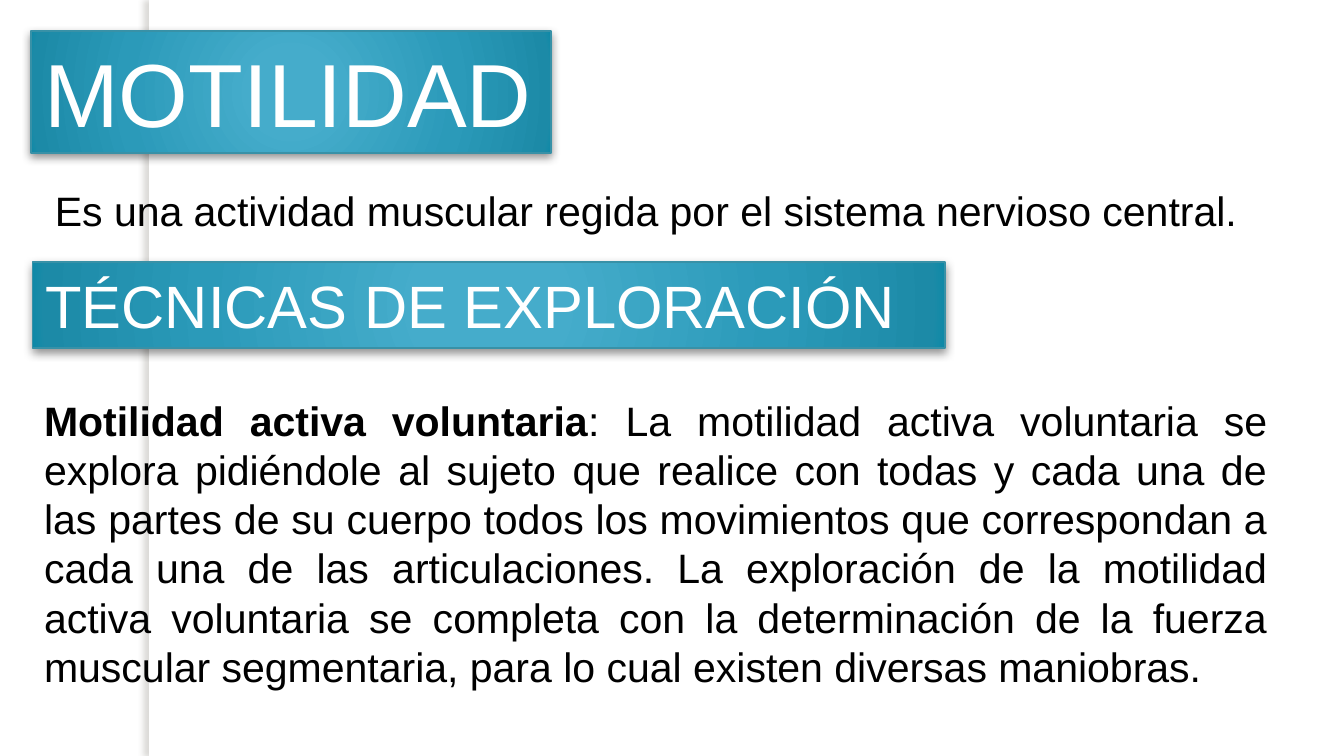
import lxml.etree
import pptx
import pptx.dml.color
import pptx.enum.dml
import pptx.enum.shapes
import pptx.enum.text
import pptx.oxml
import pptx.oxml.ns
import pptx.util

Inches = pptx.util.Inches
Align = pptx.enum.text.PP_ALIGN
Anchor = pptx.enum.text.MSO_ANCHOR
SLIDE_WIDTH = Inches(10)
SLIDE_HEIGHT = SLIDE_WIDTH * 9 // 16
FONT = "Arial"
WHITE, BLACK = "FFFFFF", "000000"
BANNER_STOPS = [(0, "45ACCC"), (15, "45ACCB"), (62, "2B9AB9"),
                (97, "1C8AA7"), (100, "0E89A7")]


def rgb(color):
    return pptx.dml.color.RGBColor.from_string(color)


def place(shape, left, top, width, height):
    shape.left, shape.top = Inches(left), Inches(top)
    shape.width, shape.height = Inches(width), Inches(height)


def add_rectangle(slide, *box):
    kind = pptx.enum.shapes.MSO_SHAPE.RECTANGLE
    return slide.shapes.add_shape(kind, *[Inches(value) for value in box])


def add_shadow(shape, color, opacity, blur, distance, angle):
    """Outer shadow: opacity in percent, lengths in points, angle in degrees."""
    shape.shadow.inherit = False
    effects = shape._element.spPr.find(pptx.oxml.ns.qn("a:effectLst"))
    effects.append(pptx.oxml.parse_xml(
        f'<a:outerShdw {pptx.oxml.ns.nsdecls("a")} blurRad="{pptx.util.Pt(blur)}" '
        f'dist="{pptx.util.Pt(distance)}" dir="{angle * 60000}" rotWithShape="0">'
        f'<a:srgbClr val="{color}"><a:alpha val="{opacity * 1000}"/></a:srgbClr>'
        '</a:outerShdw>'))


def fill_radial(shape, stops):
    shape.fill.gradient()
    gradient = shape._element.spPr.find(pptx.oxml.ns.qn("a:gradFill"))
    for child in list(gradient):
        gradient.remove(child)
    stop_list = lxml.etree.SubElement(gradient, pptx.oxml.ns.qn("a:gsLst"))
    for position, color in stops:
        stop = lxml.etree.SubElement(
            stop_list, pptx.oxml.ns.qn("a:gs"), pos=str(position * 1000))
        lxml.etree.SubElement(stop, pptx.oxml.ns.qn("a:srgbClr"), val=color)
    circle = lxml.etree.SubElement(gradient, pptx.oxml.ns.qn("a:path"), path="circle")
    lxml.etree.SubElement(circle, pptx.oxml.ns.qn("a:fillToRect"),
                          l="50000", t="50000", r="50000", b="50000")


def write_text(shape, runs, size, color, align=Align.LEFT, anchor=Anchor.TOP):
    """Write one paragraph from (text, bold) runs."""
    frame = shape.text_frame
    frame.word_wrap = True
    frame.auto_size = pptx.enum.text.MSO_AUTO_SIZE.NONE
    frame.vertical_anchor = anchor
    paragraph = frame.paragraphs[0]
    paragraph.alignment = align
    for text, bold in runs:
        run = paragraph.add_run()
        run.text = text
        run.font.name = FONT
        run.font.size = pptx.util.Pt(size)
        run.font.bold = bold
        run.font.color.rgb = rgb(color)


def style_banner(shape, text, size):
    fill_radial(shape, BANNER_STOPS)
    shape.line.color.rgb = rgb("3891A7")
    shape.line.width = pptx.util.Pt(0.75)
    add_shadow(shape, BLACK, 43, 5, 2, 90)
    write_text(shape, [(text, False)], size, WHITE)


def add_body(slide, box, runs, **options):
    shape = slide.shapes.add_textbox(*[Inches(value) for value in box])
    write_text(shape, runs, 22, BLACK, **options)


def add_side_strip(slide):
    strip = add_rectangle(slide, 1.11, 0, 0.08, 5.62)
    strip.height = SLIDE_HEIGHT
    strip.fill.solid()
    strip.fill.fore_color.rgb = rgb(WHITE)
    strip.line.fill.background()
    add_shadow(strip, "736F63", 25, 3, 3, 180)
    # Send the strip behind the title
    slide.shapes.title._element.addprevious(strip._element)


def main():
    presentation = pptx.Presentation()
    presentation.slide_width = SLIDE_WIDTH
    presentation.slide_height = SLIDE_HEIGHT
    slide = presentation.slides.add_slide(presentation.slide_layouts[5])
    slide.background.fill.solid()
    slide.background.fill.fore_color.rgb = rgb(WHITE)
    add_side_strip(slide)

    # Title and definition
    title = slide.shapes.title
    place(title, 0.23, 0.23, 3.87, 0.91)
    style_banner(title, "MOTILIDAD", 48)
    add_body(slide, (0.31, 1.33, 9.06, 0.47),
             [("Es una actividad muscular regida por el sistema nervioso central.", False)],
             anchor=Anchor.MIDDLE)

    # Examination techniques
    techniques = add_rectangle(slide, 0.24, 1.95, 6.79, 0.64)
    style_banner(techniques, "TÉCNICAS DE EXPLORACIÓN", 32)
    add_body(slide, (0.23, 2.89, 9.3, 2.32), [
        ("Motilidad activa voluntaria", True),
        (": La motilidad activa voluntaria se explora pidiéndole al sujeto que "
         "realice con todas y cada una de las partes de su cuerpo todos los "
         "movimientos que correspondan a cada una de las articulaciones. La "
         "exploración de la motilidad activa voluntaria se completa con la "
         "determinación de la fuerza muscular segmentaria, para lo cual existen "
         "diversas maniobras.", False),
    ], align=Align.JUSTIFY)

    presentation.save("out.pptx")


if __name__ == "__main__":
    main()
